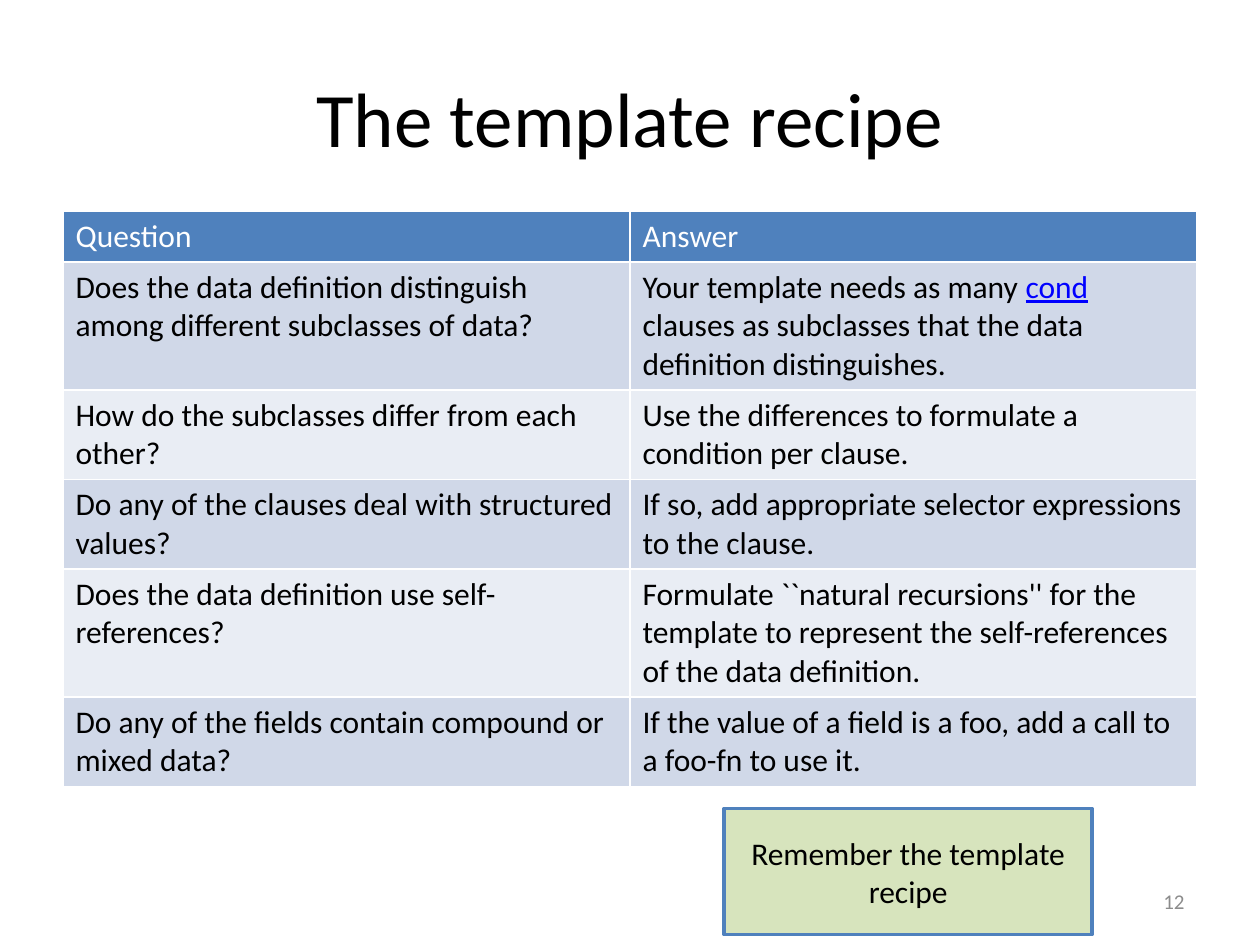
from typing import NamedTuple

import pptx
import pptx.dml.color
import pptx.enum.shapes
import pptx.enum.text
import pptx.util

Cm = pptx.util.Cm
Pt = pptx.util.Pt
RGBColor = pptx.dml.color.RGBColor
Align = pptx.enum.text.PP_ALIGN
Anchor = pptx.enum.text.MSO_ANCHOR

FONT = "Calibri"
BLACK = RGBColor(0x00, 0x00, 0x00)
WHITE = RGBColor(0xFF, 0xFF, 0xFF)
GREY = RGBColor(0x8C, 0x8C, 0x8C)
BLUE = RGBColor(0x4F, 0x81, 0xBD)
LINK_BLUE = RGBColor(0x00, 0x00, 0xFF)
GREEN = RGBColor(0xD7, 0xE4, 0xBD)
BANDS = (RGBColor(0xD0, 0xD8, 0xE8), RGBColor(0xE9, 0xED, 0xF4))

MARGIN = Cm(1.27)
CONTENT_WIDTH = Cm(22.86)
CELL_PADDING = 0.25  # cm, above and below the text together
LINE_HEIGHT = 0.77  # cm
KEYWORD = "cond"


class Step(NamedTuple):
    question: str
    answer: str
    lines: int


HEADER = Step("Question", "Answer", 1)
STEPS = (
    Step("Does the data definition distinguish among different subclasses of data?",
         "Your template needs as many cond clauses as subclasses that the data "
         "definition distinguishes.", 3),
    Step("How do the subclasses differ from each other?",
         "Use the differences to formulate a condition per clause.", 2),
    Step("Do any of the clauses deal with structured values?",
         "If so, add appropriate selector expressions to the clause.", 2),
    Step("Does the data definition use self-references?",
         "Formulate ``natural recursions'' for the template to represent the "
         "self-references of the data definition.", 3),
    Step("Do any of the fields contain compound or mixed data?",
         "If the value of a field is a foo, add a call to a foo-fn to use it.", 2),
)


def format_paragraph(paragraph, size: float, color: RGBColor, align: Align) -> None:
    paragraph.alignment = align
    paragraph.font.name = FONT
    paragraph.font.size = Pt(size)
    paragraph.font.color.rgb = color


def write(frame, text: str, size: float, color: RGBColor, align: Align) -> None:
    frame.word_wrap = True
    frame.vertical_anchor = Anchor.MIDDLE
    frame.text = text
    format_paragraph(frame.paragraphs[0], size, color, align)


def fill_cell(cell, text: str, fill: RGBColor, color: RGBColor) -> None:
    """Fill one cell, underlining the keyword wherever it stands as a word."""
    cell.fill.solid()
    cell.fill.fore_color.rgb = fill
    paragraph = cell.text_frame.paragraphs[0]
    before, keyword, after = text.partition(f" {KEYWORD} ")
    if keyword:
        paragraph.add_run().text = before + " "
        link = paragraph.add_run()
        link.text = KEYWORD
        link.font.underline = True
        link.font.color.rgb = LINK_BLUE
        paragraph.add_run().text = " " + after
    else:
        paragraph.add_run().text = text
    format_paragraph(paragraph, 18, color, Align.LEFT)
    for run in paragraph.runs:
        run.font.name = FONT
        run.font.size = Pt(18)
        run.font.bold = False
        if run.text != KEYWORD:
            run.font.color.rgb = color


def add_recipe_table(slide) -> None:
    steps = (HEADER, *STEPS)
    heights = [Cm(CELL_PADDING + LINE_HEIGHT * step.lines) for step in steps]
    table = slide.shapes.add_table(
        len(steps), 2, MARGIN, Cm(4.25), CONTENT_WIDTH, sum(heights)).table
    for index, step in enumerate(steps):
        table.rows[index].height = heights[index]
        is_header = index == 0
        fill = BLUE if is_header else BANDS[(index - 1) % 2]
        color = WHITE if is_header else BLACK
        fill_cell(table.cell(index, 0), step.question, fill, color)
        fill_cell(table.cell(index, 1), step.answer, fill, color)


def add_reminder(slide) -> None:
    reminder = slide.shapes.add_shape(
        pptx.enum.shapes.MSO_SHAPE.RECTANGLE, Cm(14.6), Cm(16.3), Cm(7.42), Cm(2.54))
    reminder.shadow.inherit = False
    reminder.fill.solid()
    reminder.fill.fore_color.rgb = GREEN
    reminder.line.color.rgb = BLUE
    reminder.line.width = Pt(2)
    write(reminder.text_frame, "Remember the template recipe", 18, BLACK, Align.CENTER)


def main() -> None:
    deck = pptx.Presentation()
    deck.slide_width, deck.slide_height = Cm(25.4), Cm(19.05)
    slide = deck.slides.add_slide(deck.slide_layouts[5])

    title = slide.shapes.title
    title.left, title.top = MARGIN, Cm(0.76)
    title.width, title.height = CONTENT_WIDTH, Cm(3.18)
    write(title.text_frame, "The template recipe", 44, BLACK, Align.CENTER)

    add_recipe_table(slide)
    add_reminder(slide)

    page_number = slide.shapes.add_textbox(Cm(18.2), Cm(17.66), Cm(5.93), Cm(1.01))
    write(page_number.text_frame, "12", 12, GREY, Align.RIGHT)

    deck.save("out.pptx")


if __name__ == "__main__":
    main()
